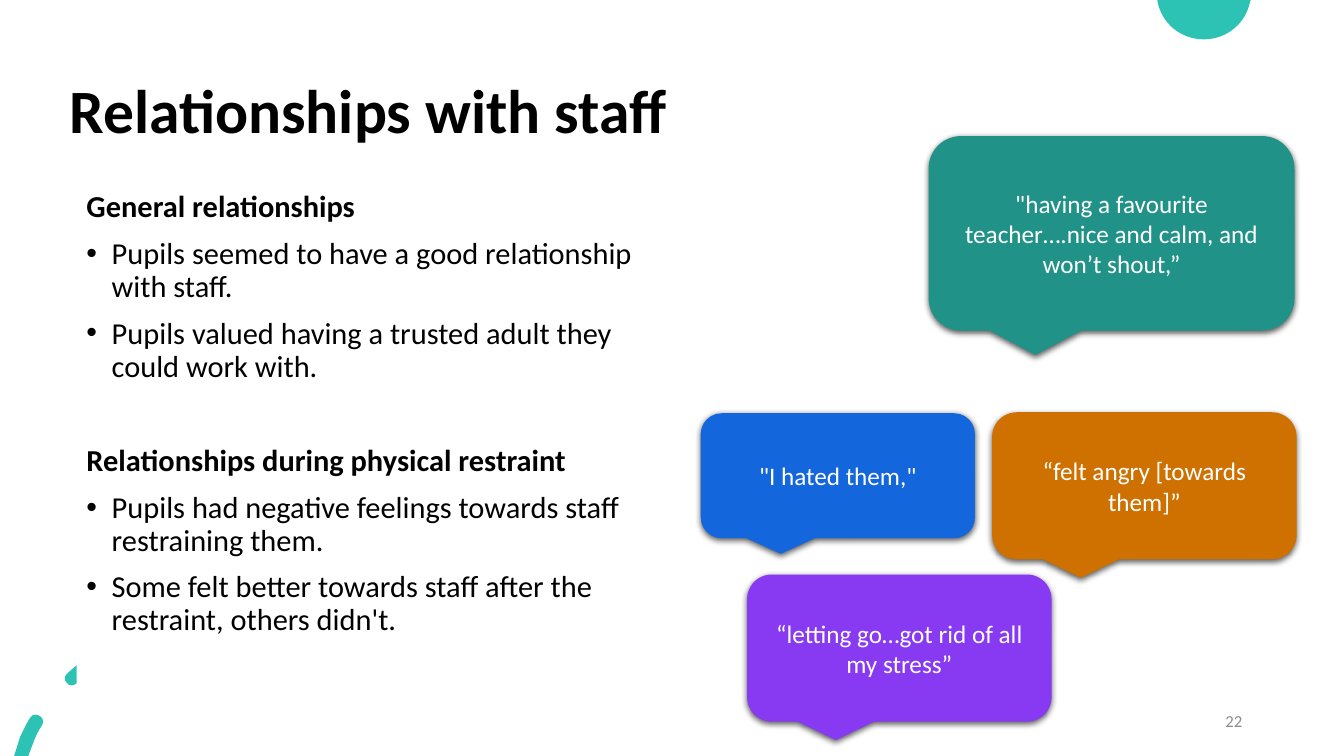
from dataclasses import dataclass

from lxml.etree import SubElement
from pptx import Presentation
from pptx.dml.color import RGBColor
from pptx.enum.shapes import MSO_SHAPE as Shape
from pptx.enum.text import MSO_ANCHOR as Anchor, PP_ALIGN as Align
from pptx.oxml.ns import qn
from pptx.util import Inches, Pt

COLORS = {
    "accent": "2CC3B4", "white": "FFFFFF", "black": "000000", "grey": "8C8C8C",
    "teal": "219287", "purple": "873AF2", "blue": "1366DC", "orange": "CE7100",
}
FONT = "Calibri"


@dataclass
class Quote:
    text: str
    left: float
    top: float
    width: float
    height: float
    color: str


@dataclass
class Line:
    text: str
    heading: bool = False
    space_before: float = 10


@dataclass
class Outline:
    start: tuple[float, float]
    segments: list[tuple[float, ...]]


QUOTES = [
    Quote('"having a favourite teacher….nice and calm, and won’t shout,”',
          9.21, 1.35, 3.63, 1.93, "teal"),
    Quote("“letting go…got rid of all my stress”", 7.41, 5.7, 3.02, 1.46, "purple"),
    Quote('"I hated them,"', 6.95, 4.1, 2.72, 1.24, "blue"),
    Quote("“felt angry [towards them]”", 9.84, 4.09, 3.02, 1.46, "orange"),
]
LINES = [
    Line("General relationships", True, 0),
    Line("Pupils seemed to have a good relationship with staff."),
    Line("Pupils valued having a trusted adult they could work with."),
    Line("Relationships during physical restraint", True, 44),
    Line("Pupils had negative feelings towards staff restraining them."),
    Line("Some felt better towards staff after the restraint, others didn't."),
]
HALF_DISC = [Outline((11.48, 0), [
    (12.41, 0), (12.4, 0.01),
    (12.36, 0.23, 12.17, 0.39, 11.94, 0.39),
    (11.71, 0.39, 11.52, 0.23, 11.48, 0.01),
])]
DASHED_ARC = [
    Outline((0.36, 7.09), [
        (0.34, 7.08, 0.31, 7.1, 0.3, 7.12),
        (0.26, 7.18, 0.23, 7.25, 0.2, 7.31),
        (0.14, 7.5), (0.28, 7.5), (0.33, 7.37),
        (0.35, 7.31, 0.38, 7.25, 0.42, 7.19),
        (0.44, 7.16, 0.42, 7.11, 0.39, 7.1),
        (0.38, 7.09, 0.37, 7.09, 0.36, 7.09),
    ]),
    Outline((1.05, 6.43), [
        (1.04, 6.43, 1.03, 6.43, 1.03, 6.44),
        (0.9, 6.5, 0.77, 6.58, 0.67, 6.68),
        (0.64, 6.7, 0.63, 6.75, 0.66, 6.77),
        (0.67, 6.79, 0.69, 6.8, 0.71, 6.8),
        (0.73, 6.8, 0.74, 6.79, 0.76, 6.78),
        (0.86, 6.7, 0.97, 6.62, 1.09, 6.56),
        (1.12, 6.54, 1.14, 6.5, 1.12, 6.47),
        (1.11, 6.44, 1.08, 6.43, 1.05, 6.43),
    ]),
    Outline((1.79, 6.25), [
        (1.72, 6.25, 1.65, 6.26, 1.58, 6.27),
        (1.54, 6.27, 1.51, 6.31, 1.52, 6.35),
        (1.52, 6.38, 1.55, 6.41, 1.58, 6.41),
        (1.73, 6.39, 1.86, 6.39, 1.99, 6.4),
        (2.03, 6.41, 2.07, 6.38, 2.07, 6.35),
        (2.08, 6.31, 2.05, 6.27, 2.01, 6.27),
        (1.94, 6.26, 1.86, 6.25, 1.79, 6.25),
    ]),
]


def rgb(name: str) -> RGBColor:
    return RGBColor.from_string(COLORS[name])


def fill_shape(shape, color: str) -> None:
    shape.fill.solid()
    shape.fill.fore_color.rgb = rgb(color)
    shape.line.fill.background()
    shape.shadow.inherit = False


def format_runs(para, size: float, color: str, bold: bool = False) -> None:
    for span in para.runs:
        span.font.name = FONT
        span.font.size = Pt(size)
        span.font.bold = bold
        span.font.color.rgb = rgb(color)


def draw_outlines(page, outlines: list[Outline]) -> None:
    builder = page.shapes.build_freeform(*map(Inches, outlines[0].start))
    for number, outline in enumerate(outlines):
        if number:
            builder.move_to(*map(Inches, outline.start))
        builder.add_line_segments([
            (Inches(x), Inches(y)) for segment in outline.segments
            for x, y in zip(segment[::2], segment[1::2])])
    shape = builder.convert_to_shape()
    fill_shape(shape, "accent")
    geometry = shape._element.find(".//" + qn("a:path"))
    steps = iter(geometry.findall(qn("a:lnTo")))
    for outline in outlines:
        for segment in outline.segments:
            step = next(steps)
            if len(segment) == 6:
                step.tag = qn("a:cubicBezTo")
                for extra in (next(steps), next(steps)):
                    step.append(extra[0])
                    geometry.remove(extra)


def draw_title(page) -> None:
    title = page.shapes.title
    title.left, title.top = Inches(0.59), Inches(0.4)
    title.width, title.height = Inches(11.5), Inches(1.45)
    title.text_frame.text = "Relationships with staff"
    title.text_frame.vertical_anchor = Anchor.MIDDLE
    para = title.text_frame.paragraphs[0]
    para.alignment = Align.LEFT
    para.line_spacing = 0.9
    format_runs(para, 44, "black", True)


def add_bullet(para) -> None:
    properties = para._p.get_or_add_pPr()
    properties.set("marL", str(Inches(0.25)))
    properties.set("indent", str(Inches(-0.25)))
    SubElement(properties, qn("a:buFont"), typeface="Arial")
    SubElement(properties, qn("a:buChar"), char="•")


def draw_body(page) -> None:
    box = page.shapes.add_textbox(Inches(0.76), Inches(1.85), Inches(5.77), Inches(5.09))
    box.fill.solid()
    box.fill.fore_color.rgb = rgb("white")
    frame = box.text_frame
    frame.word_wrap = True
    frame.text = "\n".join(line.text for line in LINES)
    for para, line in zip(frame.paragraphs, LINES):
        if not line.heading:
            add_bullet(para)
        para.line_spacing = 0.9
        para.space_before = Pt(line.space_before)
        format_runs(para, 21.7, "black", line.heading)


def draw_page_number(page) -> None:
    box = page.shapes.add_textbox(Inches(9.42), Inches(6.95), Inches(3), Inches(0.4))
    frame = box.text_frame
    frame.word_wrap = True
    frame.vertical_anchor = Anchor.MIDDLE
    frame.text = "22"
    frame.paragraphs[0].alignment = Align.RIGHT
    format_runs(frame.paragraphs[0], 12, "grey")


def add_shadow(shape) -> None:
    effects = shape._element.spPr.find(qn("a:effectLst"))
    shadow = SubElement(effects, qn("a:outerShdw"), blurRad=str(Pt(4.5)),
                        dist=str(Pt(1.5)), dir="5400000", algn="ctr", rotWithShape="0")
    color = SubElement(shadow, qn("a:srgbClr"), val=COLORS["black"])
    SubElement(color, qn("a:alpha"), val="63000")


def draw_quote(page, quote: Quote) -> None:
    bubble = page.shapes.add_shape(
        Shape.ROUNDED_RECTANGULAR_CALLOUT, Inches(quote.left), Inches(quote.top),
        Inches(quote.width), Inches(quote.height))
    fill_shape(bubble, quote.color)
    add_shadow(bubble)
    frame = bubble.text_frame
    frame.word_wrap = True
    frame.vertical_anchor = Anchor.MIDDLE
    frame.text = quote.text
    frame.paragraphs[0].alignment = Align.CENTER
    format_runs(frame.paragraphs[0], 18, "white")


def main() -> None:
    deck = Presentation()
    deck.slide_width, deck.slide_height = Inches(13.33), Inches(7.5)
    page = deck.slides.add_slide(deck.slide_layouts[5])
    for outlines in (HALF_DISC, DASHED_ARC):
        draw_outlines(page, outlines)
    draw_title(page)
    draw_body(page)
    draw_page_number(page)
    for quote in QUOTES:
        draw_quote(page, quote)
    deck.save("out.pptx")


if __name__ == "__main__":
    main()
